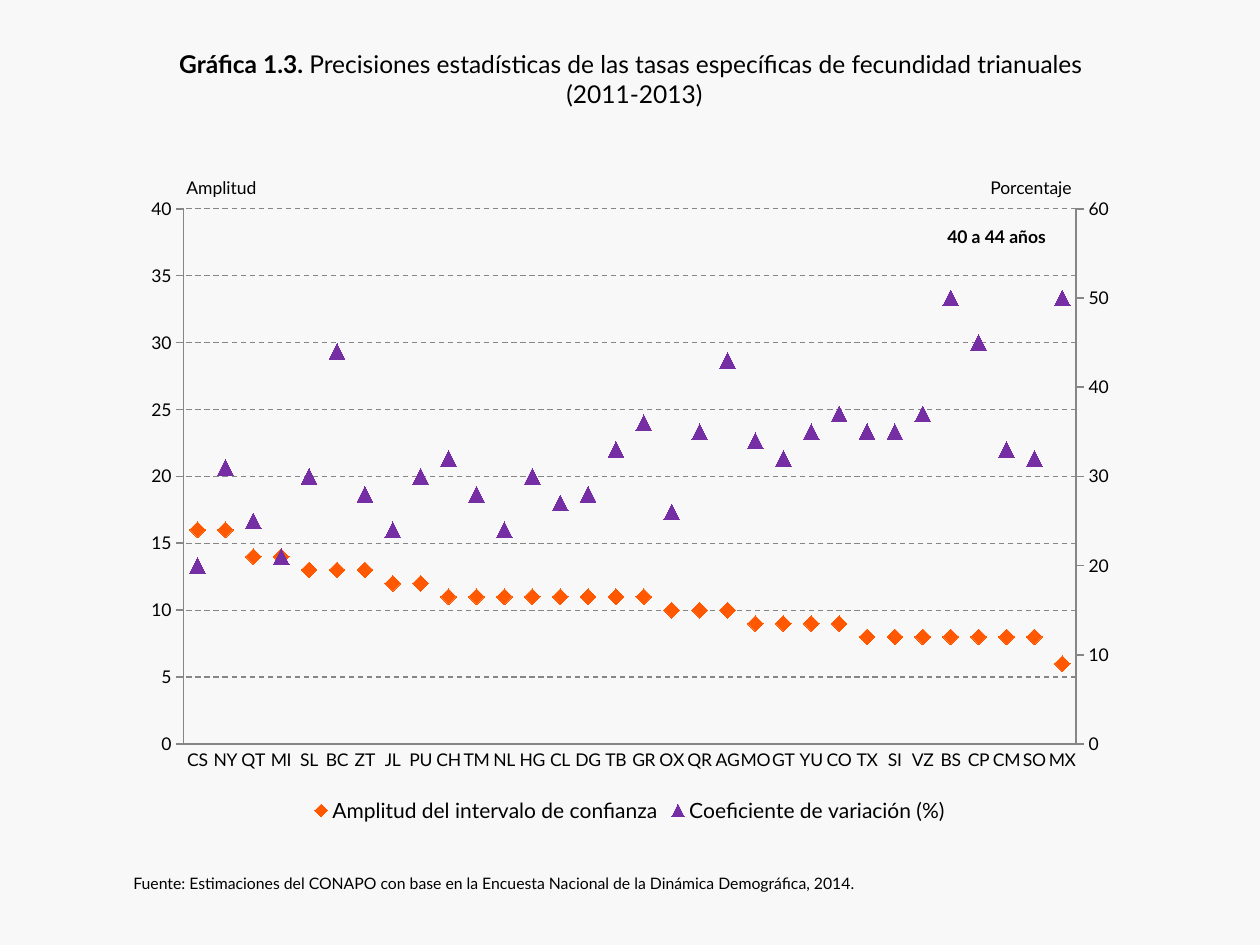
from copy import deepcopy
from pptx import Presentation
from pptx.chart.axis import CategoryAxis, ValueAxis
from pptx.chart.data import CategoryChartData
from pptx.dml.color import RGBColor
from pptx.enum.chart import (XL_CHART_TYPE, XL_LEGEND_POSITION,
                             XL_MARKER_STYLE, XL_TICK_MARK)
from pptx.enum.dml import MSO_LINE
from pptx.enum.text import MSO_AUTO_SIZE, PP_ALIGN
from pptx.oxml import parse_xml
from pptx.oxml.ns import nsdecls, qn
from pptx.util import Emu, Pt

BLACK = RGBColor(0, 0, 0)
GREY = RGBColor(0x86, 0x86, 0x86)
PALE = RGBColor(0xF8, 0xF8, 0xF8)
ORANGE = RGBColor(0xFF, 0x58, 0x00)
PURPLE = RGBColor(0x76, 0x2E, 0xA4)

STATES = ("CS NY QT MI SL BC ZT JL PU CH TM NL HG CL DG TB "
          "GR OX QR AG MO GT YU CO TX SI VZ BS CP CM SO MX").split()
WIDTHS = [16, 16, 14, 14, 13, 13, 13, 12, 12, 11, 11, 11, 11, 11, 11, 11,
          11, 10, 10, 10, 9, 9, 9, 9, 8, 8, 8, 8, 8, 8, 8, 6]
COEFFS = [20, 31, 25, 21, 30, 44, 28, 24, 30, 32, 28, 24, 30, 27, 28, 33,
          36, 26, 35, 43, 34, 32, 35, 37, 35, 35, 37, 50, 45, 33, 32, 50]


class Deck:
    font = "Lato"
    scale = 914400 / 126  # EMU in one px

    def __init__(self, wide, high):
        self.prs = Presentation()
        self.prs.slide_width, self.prs.slide_height = self.px(wide, high)
        self.slide = self.prs.slides.add_slide(self.prs.slide_layouts[6])
        fill = self.slide.background.fill
        fill.solid()
        fill.fore_color.rgb = PALE

    def px(self, *nums):
        return [Emu(round(n * self.scale)) for n in nums]

    def style(self, font, size, bold=False):
        font.name, font.size, font.bold = self.font, Pt(size), bold
        font.color.rgb = BLACK

    def text(self, box, lines, size, wrap=False, align=PP_ALIGN.LEFT):
        """Each line is a list of (words, bold) runs."""
        frame = self.slide.shapes.add_textbox(*self.px(*box)).text_frame
        frame.word_wrap = wrap
        frame.auto_size = MSO_AUTO_SIZE.SHAPE_TO_FIT_TEXT
        par = frame.paragraphs[0]
        par.alignment = align
        for i, line in enumerate(lines):
            if i:
                par.add_line_break()
            for words, bold in line:
                run = par.add_run()
                run.text = words
                self.style(run.font, size, bold)

    def axis(self, axis, tick):
        axis.major_tick_mark = tick
        axis.minor_tick_mark = XL_TICK_MARK.NONE
        self.style(axis.tick_labels.font, 10)
        axis.format.line.color.rgb = GREY
        axis.format.line.width = Pt(1)

    def range(self, axis, top, step):
        axis.minimum_scale, axis.maximum_scale = 0, top
        axis.major_unit = step

    def chart(self, box, cats, series):
        data = CategoryChartData(number_format="#,##0")
        data.categories = cats
        for name, vals in series:
            data.add_series(name, vals)
        chart = self.slide.shapes.add_chart(
            XL_CHART_TYPE.LINE_MARKERS, *self.px(*box), data).chart
        self.style(chart.font, 18)
        chart.has_title = False
        chart.has_legend = True
        chart.legend.position = XL_LEGEND_POSITION.BOTTOM
        chart.legend.include_in_layout = False
        self.style(chart.legend.font, 12)
        return chart

    def marks(self, series, shape, color):
        series.smooth = False
        series.format.line.fill.background()
        mark = series.marker
        mark.style, mark.size = shape, 9
        mark.format.fill.solid()
        mark.format.fill.fore_color.rgb = color
        mark.format.line.fill.background()

    def layout(self, chart, **parts):
        """Fix the inner plot area by shares of the chart."""
        vals = "".join(f'<c:{k} val="{v}"/>' for k, v in parts.items())
        node = parse_xml(
            f'<c:layout {nsdecls("c")}><c:manualLayout>'
            '<c:layoutTarget val="inner"/><c:xMode val="edge"/>'
            f'<c:yMode val="edge"/>{vals}</c:manualLayout></c:layout>')
        area = chart.element.find(".//" + qn("c:plotArea"))
        old = area.find(qn("c:layout"))
        if old is not None:
            area.remove(old)
        area.insert(0, node)

    def second(self, chart):
        """Move the last series to its own plot and return its right axis."""
        area = chart.element.find(".//" + qn("c:plotArea"))
        plot, cat, val = (area.find(qn("c:" + tag))
                          for tag in ("lineChart", "catAx", "valAx"))
        plot2, cat2, val2 = (deepcopy(node) for node in (plot, cat, val))
        plot.remove(plot.findall(qn("c:ser"))[-1])
        plot2.remove(plot2.find(qn("c:ser")))
        plot.addnext(plot2)
        val.addnext(val2)
        val2.addnext(cat2)
        for node, ids in ((plot2, "12"), (cat2, "12"), (val2, "21")):
            refs = node.findall(qn("c:axId")) + node.findall(qn("c:crossAx"))
            for ref, num in zip(refs, ids):
                ref.set("val", num)
        CategoryAxis(cat2).visible = False
        val2.find(qn("c:axPos")).set("val", "r")
        # The right axis meets the categories at their far end
        for old in val2.findall(qn("c:crosses")):
            val2.remove(old)
        val2.find(qn("c:crossAx")).addnext(
            parse_xml(f'<c:crosses {nsdecls("c")} val="max"/>'))
        right = ValueAxis(val2)
        right.has_major_gridlines = False
        return right


deck = Deck(1260, 945)

# Chart with two value axes
chart = deck.chart((134, 183, 992, 645), STATES, [
    ("Amplitud del intervalo de confianza", WIDTHS),
    ("Coeficiente de variación (%)", COEFFS)])
deck.layout(chart, x=0.05, y=0.04, w=0.9, h=0.83)
deck.axis(chart.category_axis, XL_TICK_MARK.NONE)
left = chart.value_axis
deck.axis(left, XL_TICK_MARK.OUTSIDE)
left.tick_labels.number_format = "#,##0"
left.tick_labels.number_format_is_linked = False
deck.range(left, 40, 5)
grid = left.major_gridlines.format.line
grid.color.rgb, grid.width, grid.dash_style = GREY, Pt(0.75), MSO_LINE.DASH
deck.range(deck.second(chart), 60, 10)
looks = ((XL_MARKER_STYLE.DIAMOND, ORANGE), (XL_MARKER_STYLE.TRIANGLE, PURPLE))
for plot, look in zip(chart.plots, looks):
    plot.vary_by_categories = False
    deck.marks(plot.series[0], *look)

# Source and chart labels
deck.text((121, 868, 1022, 32), [[(
    "Fuente: Estimaciones del CONAPO con base en la Encuesta Nacional "
    "de la Dinámica Demográfica, 2014.", False)]], 9, wrap=True)
deck.text((935, 220, 141, 34), [[("40 a 44 años", True)]], 10)
deck.text((174, 171, 106, 34), [[("Amplitud", False)]], 10)
deck.text((978, 171, 120, 34), [[("Porcentaje", False)]], 10)

# Title
deck.text((44, 43, 1181, 72), [
    [("Gráfica 1.3. ", True),
     ("Precisiones estadísticas de las tasas específicas de fecundidad "
      "trianuales ", False)],
    [("(2011-2013)", False)]], 14, wrap=True, align=PP_ALIGN.CENTER)

deck.prs.save("out.pptx")
